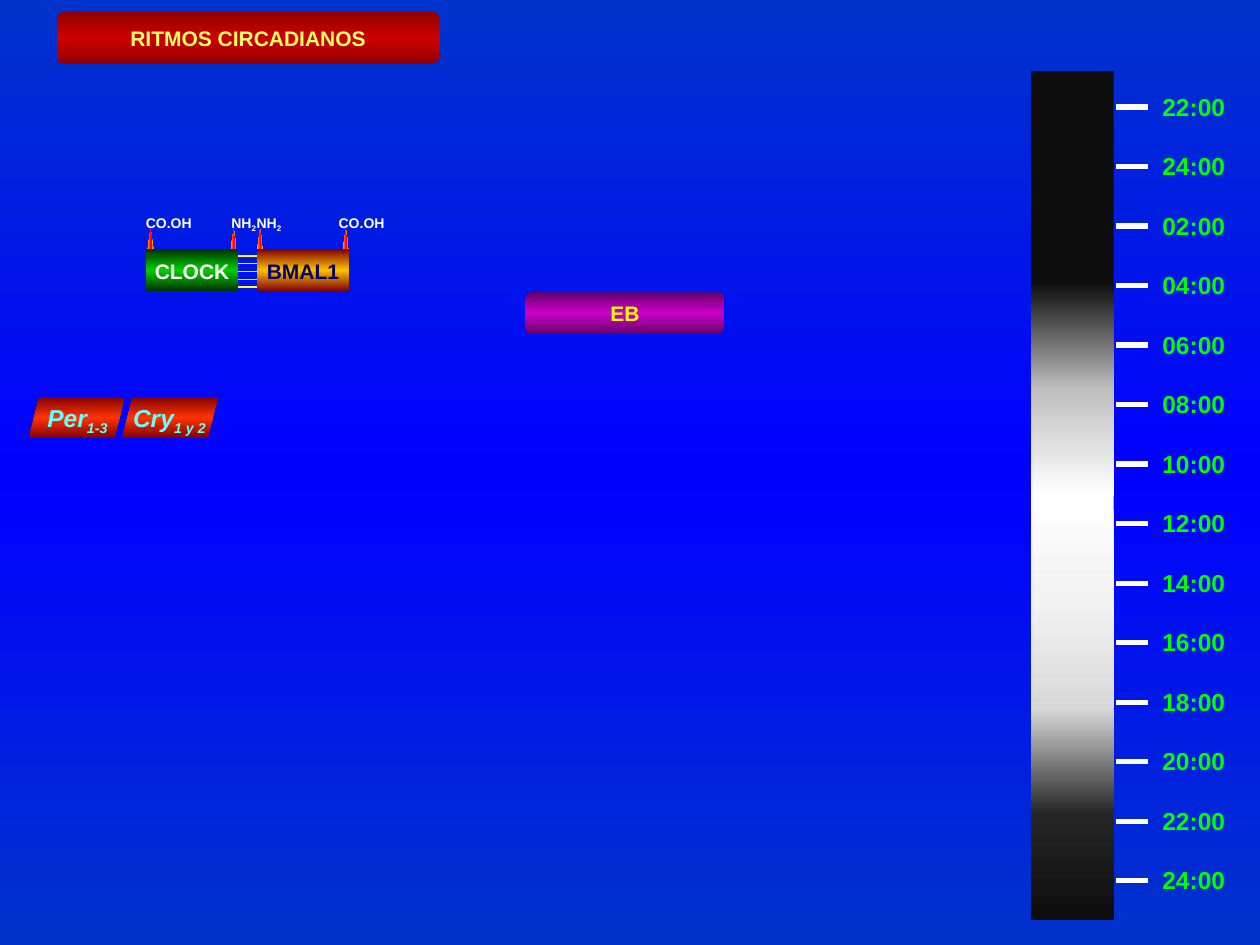
"""Build the circadian rhythms slide with its clock genes and day scale."""
from lxml import etree
from pptx import Presentation
from pptx import util as u
from pptx.dml import color
from pptx.enum import shapes, text
from pptx.oxml import ns

HUES = {
    "blue": "0033CC", "deep": "0000FF", "wine": "920000", "red": "CC0000",
    "cream": "FFFF66", "white": "FFFFFF", "lime": "00FF00", "night": "0D0D0D",
    "dusk": "262626", "grey": "BFBFBF", "mist": "D9D9D9", "pale": "F2F2F2",
    "plum": "660066", "pink": "CC00CC", "yellow": "FFFF00", "gold": "FFC000",
    "flame": "FF0000", "pine": "003300", "green": "00CC00", "brown": "800000",
    "navy": "000066", "rust": "FF3300", "aqua": "66FFFF",
}
KIND = shapes.MSO_SHAPE


def paint(fill, root, names, angle):
    fill.gradient()
    stops = root.find(".//" + ns.qn("a:gsLst"))
    for old in list(stops):
        stops.remove(old)
    for i, name in enumerate(names):
        stop = etree.SubElement(stops, ns.qn("a:gs"), pos=str(i * 50000))
        etree.SubElement(stop, ns.qn("a:srgbClr"), val=HUES[name])
    fill.gradient_angle = -angle % 360


def write(x, y, w, h, size, hue, word, sub="", slant=False):
    box = slide.shapes.add_textbox(*map(u.Inches, (x, y, w, h)))
    box.text_frame.word_wrap = False
    para = box.text_frame.paragraphs[0]
    para.alignment = text.PP_ALIGN.CENTER
    for part in filter(None, (word, sub)):
        run = para.add_run()
        run.text = part
        run.font.name = "Arial"
        run.font.size = u.Pt(size)
        run.font.bold = True
        run.font.italic = slant
        run.font.color.rgb = color.RGBColor.from_string(HUES[hue])
        if part == sub:
            run._r.get_or_add_rPr().set("baseline", "-25000")


deck = Presentation()
deck.slide_width, deck.slide_height = u.Inches(10), u.Inches(7.5)
slide = deck.slides.add_slide(deck.slide_layouts[6])
paint(slide.background.fill, slide.element, ("blue", "deep", "blue"), 90)

STEP = 6.14 / 13
lines = [(9.11, 8.86, 0.85 + i * STEP, "white", 3) for i in range(14)]
lines += [(1.84, 2.09, 2.03 + i * 0.0625, "yellow", 1) for i in range(5)]
for start, end, y, hue, width in lines:
    line = slide.shapes.add_connector(
        shapes.MSO_CONNECTOR.STRAIGHT,
        u.Inches(start), u.Inches(y), u.Inches(end), u.Inches(y))
    line.line.color.rgb = color.RGBColor.from_string(HUES[hue])
    line.line.width = u.Pt(width)
    etree.SubElement(line._element.spPr, ns.qn("a:effectLst"))

blocks = [
    (KIND.ROUNDED_RECTANGLE, 0.45, 0.09, 3.04, 0.42, ("wine", "red", "wine"), 90),
    (KIND.ROUNDED_RECTANGLE, 4.17, 2.32, 1.58, 0.33, ("plum", "pink", "plum"), 90),
]
sky = [("night", "night", "night"), ("night", "grey", "white"),
       ("white", "pale", "mist"), ("mist", "dusk", "night")]
for i, names in enumerate(sky):
    blocks.append((KIND.RECTANGLE, 8.18, 0.56 + i * 1.685, 0.66, 1.69, names, 90))
for x in (1.17, 1.83, 2.04, 2.72):
    blocks.append((KIND.ISOSCELES_TRIANGLE, x, 1.82, 0.05, 0.17,
                   ("gold", "flame", "gold"), 0))
blocks += [
    (KIND.RECTANGLE, 1.16, 1.98, 0.73, 0.33, ("pine", "green", "pine"), 90),
    (KIND.RECTANGLE, 2.04, 1.98, 0.73, 0.33, ("brown", "gold", "brown"), 90),
]
for x in (0.23, 0.97):
    blocks.append((KIND.PARALLELOGRAM, x, 3.15, 0.76, 0.33,
                   ("brown", "rust", "brown"), 90))
for kind, x, y, w, h, names, angle in blocks:
    block = slide.shapes.add_shape(kind, *map(u.Inches, (x, y, w, h)))
    block.shadow.inherit = False
    block.line.fill.background()
    paint(block.fill, block._element, names, angle)

for i in range(14):
    write(9.06, 0.68 + i * STEP, 0.83, 0.34, 14, "lime",
          f"{(20 + 2 * i) % 24 + 2:02}:00")
write(0.93, 0.15, 2.08, 0.3, 12, "cream", "RITMOS CIRCADIANOS")
write(4.67, 2.34, 0.58, 0.3, 12, "yellow", "EB")
for x, word, sub in ((1.05, "CO.OH", ""), (2.58, "CO.OH", ""),
                     (1.71, "NH", "2"), (1.91, "NH", "2")):
    write(x, 1.65, 0.45 if sub else 0.58, 0.24, 8, "white", word, sub)
write(1.11, 2, 0.83, 0.3, 12, "white", "CLOCK")
write(1.99, 2, 0.83, 0.3, 12, "navy", "BMAL1")
write(0.26, 3.15, 0.71, 0.34, 14, "aqua", "Per", "1-3", True)
write(0.93, 3.15, 0.83, 0.34, 14, "aqua", "Cry", "1 y 2", True)

deck.save("out.pptx")
